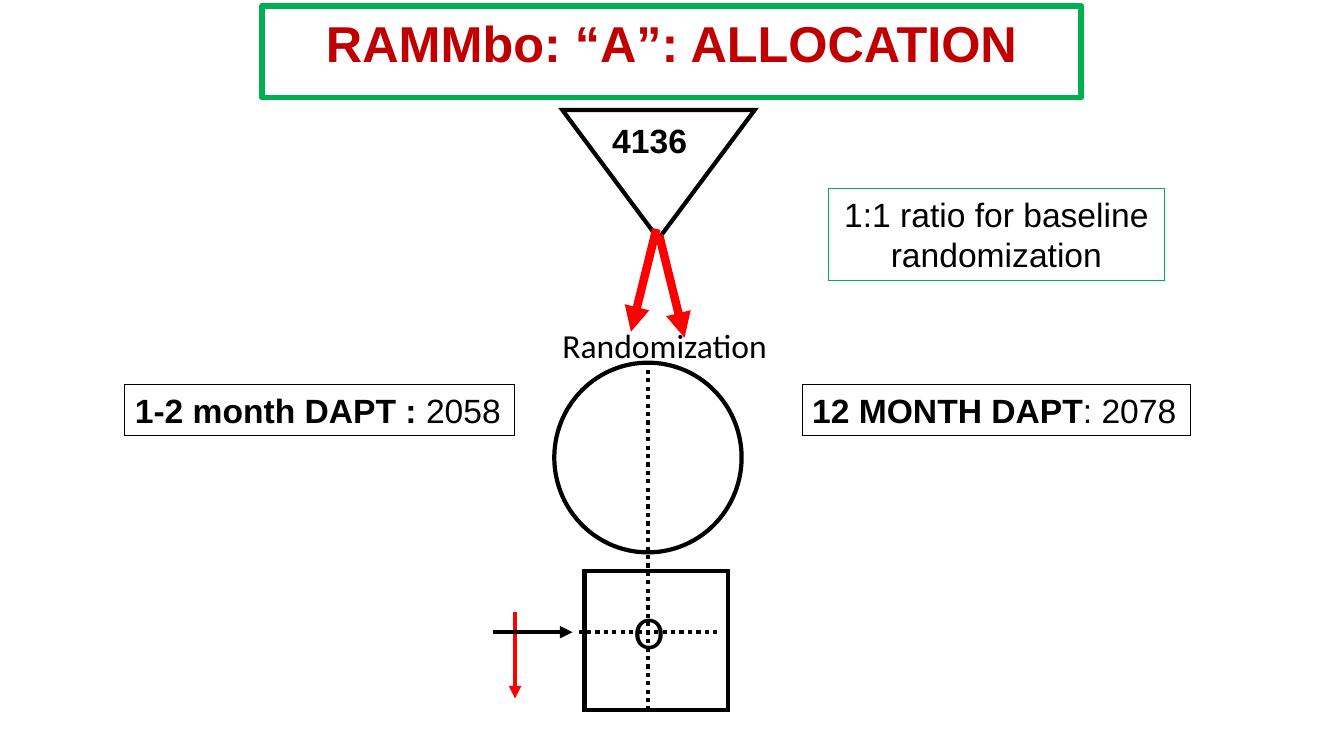
from lxml import etree
from pptx import Presentation
from pptx.dml.color import RGBColor
from pptx.enum.dml import MSO_LINE
from pptx.enum.shapes import MSO_CONNECTOR, MSO_SHAPE
from pptx.enum.text import MSO_ANCHOR, MSO_AUTO_SIZE, PP_ALIGN
from pptx.oxml.ns import qn
from pptx.util import Cm, Pt

STRAIGHT = MSO_CONNECTOR.STRAIGHT
DOTTED = MSO_LINE.ROUND_DOT
RECTANGLE = MSO_SHAPE.RECTANGLE
ELLIPSE = MSO_SHAPE.OVAL
TRIANGLE = MSO_SHAPE.ISOSCELES_TRIANGLE
TOP = MSO_ANCHOR.TOP
NO_AUTOFIT = MSO_AUTO_SIZE.NONE
LEFT, CENTER = PP_ALIGN.LEFT, PP_ALIGN.CENTER

BLACK, RED, DARK_RED, GREEN = "000000", "FF0000", "C00000", "00B050"
TITLE_ONLY = 5


def color(value):
    return RGBColor.from_string(value)


def set_line(shape, line_color, width):
    shape.line.color.rgb = color(line_color)
    shape.line.width = Pt(width)


def set_paragraph(paragraph, size, font="Arial", text_color=BLACK, bold=None,
                  alignment=LEFT):
    paragraph.alignment = alignment
    paragraph.font.name = font
    paragraph.font.size = Pt(size)
    paragraph.font.color.rgb = color(text_color)
    paragraph.font.bold = bold


def set_frame(frame, wrap, horizontal=0.25, vertical=0.13):
    """Set wrapping and insets, with text starting at the top."""
    frame.word_wrap = wrap
    frame.auto_size = NO_AUTOFIT
    frame.vertical_anchor = TOP
    frame.margin_left = frame.margin_right = Cm(horizontal)
    frame.margin_top = frame.margin_bottom = Cm(vertical)


def add_title(slide, text):
    title = slide.shapes.title
    title.left, title.top, title.width, title.height = (
        Cm(6.6), Cm(0.15), Cm(20.65), Cm(2.31))
    set_line(title, GREEN, 4)
    set_frame(title.text_frame, True, 0.33, 0.33)
    title.text_frame.text = text
    paragraph = title.text_frame.paragraphs[0]
    paragraph.line_spacing = 0.9
    set_paragraph(paragraph, 36, text_color=DARK_RED, bold=True, alignment=CENTER)


def add_outline(slide, kind, left, top, width, height, line_color=BLACK,
                line_width=3):
    """Add an unfilled shape with sharp corners."""
    shape = slide.shapes.add_shape(kind, Cm(left), Cm(top), Cm(width), Cm(height))
    shape.shadow.inherit = False
    shape.fill.background()
    set_line(shape, line_color, line_width)
    etree.SubElement(shape.line._get_or_add_ln(), qn("a:miter"), lim="800000")
    return shape


def add_label(slide, text, left, top, width, height, size=24, wrap=False,
              indent=0.25, **style):
    box = slide.shapes.add_textbox(Cm(left), Cm(top), Cm(width), Cm(height))
    frame = box.text_frame
    set_frame(frame, wrap)
    frame.margin_left = Cm(indent)
    frame.text = text
    set_paragraph(frame.paragraphs[0], size, **style)


def add_framed_text(slide, runs, left, top, width, height, line_color=BLACK,
                    wrap=False, alignment=LEFT):
    """Add a thin frame around runs given as (text, bold) pairs."""
    shape = add_outline(slide, RECTANGLE, left, top, width, height, line_color, 0.75)
    set_frame(shape.text_frame, wrap)
    paragraph = shape.text_frame.paragraphs[0]
    set_paragraph(paragraph, 24, alignment=alignment)
    for text, bold in runs:
        run = paragraph.add_run()
        run.text = text
        run.font.bold = bold


def add_line(slide, start, end, line_color=BLACK, width=3, dash=None, arrow=False):
    line = slide.shapes.add_connector(
        STRAIGHT, *(Cm(length) for length in (*start, *end)))
    set_line(line, line_color, width)
    if dash:
        line.line.dash_style = dash
    if arrow:
        etree.SubElement(line.line._get_or_add_ln(), qn("a:tailEnd"), type="triangle")
    etree.SubElement(line._element.spPr, qn("a:effectLst"))


def main():
    presentation = Presentation()
    presentation.slide_width, presentation.slide_height = Cm(33.87), Cm(19.05)
    slide = presentation.slides.add_slide(presentation.slide_layouts[TITLE_ONLY])
    add_title(slide, "RAMMbo: “A”: ALLOCATION")

    # Comparison circle and outcome square with their dividing lines
    add_line(slide, (12.98, 15.42), (12.98, 17.6), RED, arrow=True)
    add_outline(slide, ELLIPSE, 13.97, 9.14, 4.72, 4.78)
    add_outline(slide, RECTANGLE, 14.73, 14.38, 3.61, 3.51)
    add_line(slide, (16.33, 9.32), (16.33, 17.88), dash=DOTTED)
    add_line(slide, (14.58, 15.93), (18.11, 15.93), dash=DOTTED)
    add_line(slide, (12.42, 15.93), (14.43, 15.93), arrow=True)
    add_label(slide, "O", 15.72, 15.06, 1.32, 1.7, size=33.4, font="Calibri")

    # Participants and their randomization
    participants = add_outline(slide, TRIANGLE, 14.17, 2.77, 4.85, 3.25)
    participants.rotation = 180
    add_label(slide, "4136", 14.71, 2.9, 2.92, 1.3, indent=0.72, bold=True)
    for start, end in (((16.54, 5.77), (15.9, 8.36)),
                       ((16.61, 5.92), (17.25, 8.51))):
        add_line(slide, start, end, RED, 6, arrow=True)
    add_label(slide, "Randomization", 5, 8.05, 23.5, 1.3, wrap=True,
              font="Calibri", alignment=CENTER)
    add_framed_text(slide, [("1:1 ratio for baseline randomization", False)],
                    20.88, 4.75, 8.46, 2.31, GREEN, wrap=True, alignment=CENTER)

    # Treatment groups
    add_framed_text(slide, [("1-2 month DAPT : ", True), ("2058", False)],
                    3.15, 9.7, 9.83, 1.27)
    add_framed_text(slide, [("12 MONTH DAPT", True), (": 2078", False)],
                    20.22, 9.7, 9.78, 1.27)
    presentation.save("out.pptx")


if __name__ == "__main__":
    main()
